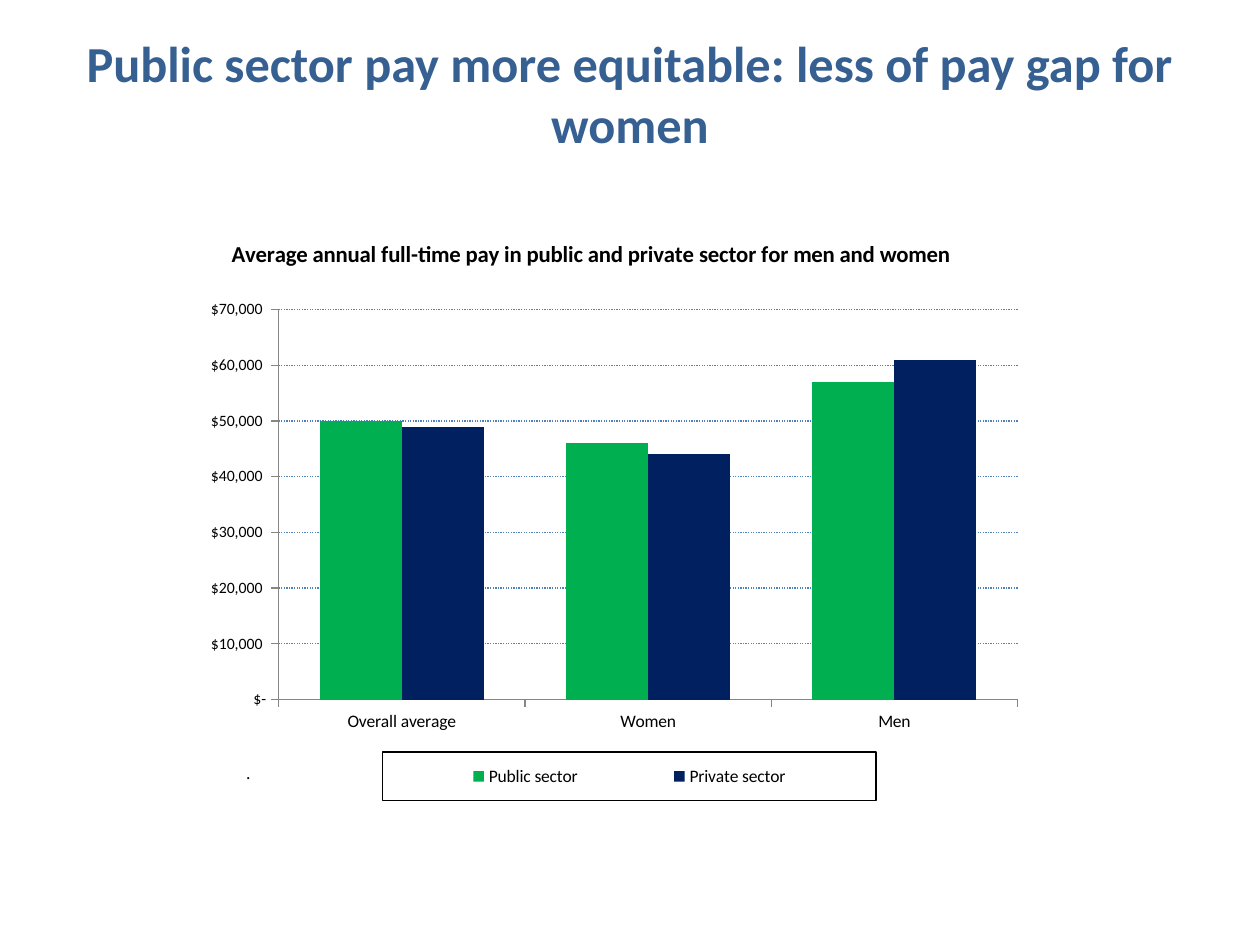
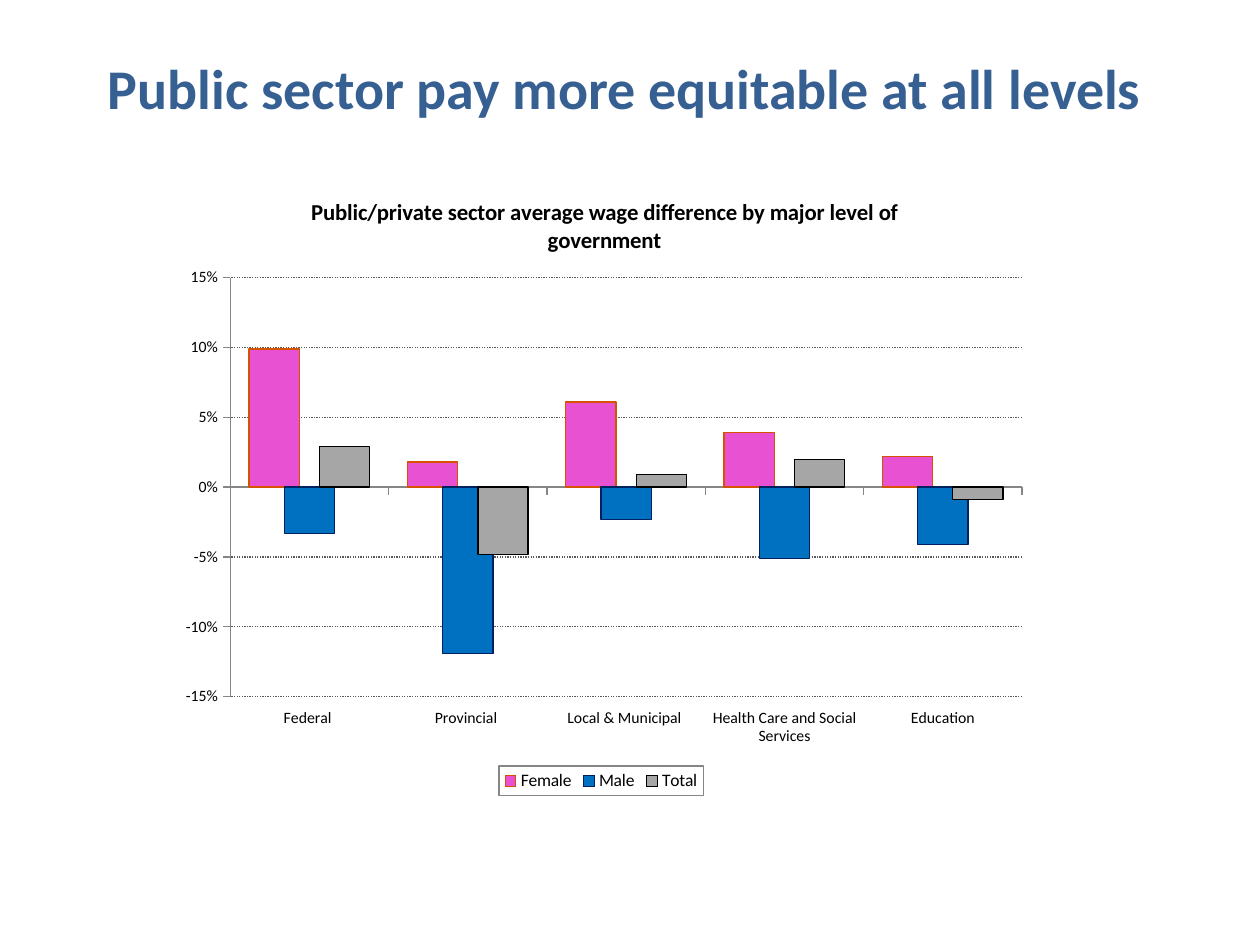
from dataclasses import dataclass
from lxml import etree
from pptx import Presentation
from pptx import util as u
from pptx.chart.data import CategoryChartData
from pptx.dml.color import RGBColor
from pptx.enum import chart as ch, dml, text
from pptx.oxml import parse_xml
from pptx.oxml.ns import nsdecls, qn


@dataclass(frozen=True)
class Theme:
    font: str = "Calibri"
    title: str = "376092"
    ink: str = "000000"
    axis: str = "868686"
    chart_title: float = 13
    label: float = 10
    small: float = 9


T = Theme()


def put(tf, content, size=T.label, bold=False, color=T.ink):
    p = tf.paragraphs[0]
    p.alignment = text.PP_ALIGN.CENTER
    r = p.add_run()
    r.text = content
    r.font.name, r.font.size, r.font.bold = T.font, u.Pt(size), bold
    r.font.color.rgb = RGBColor.from_string(color)


def place(el, index, x, y, w=None, h=None, inner=False):
    for old in el.findall(qn("c:layout")):
        el.remove(old)
    layout = etree.Element(qn("c:layout"))
    manual = etree.SubElement(layout, qn("c:manualLayout"))
    values = [("layoutTarget", "inner")] if inner else []
    values += [("xMode", "edge"), ("yMode", "edge"), ("x", x), ("y", y)]
    values += [("w", w), ("h", h)] if w else []
    for tag, val in values:
        etree.SubElement(manual, qn("c:" + tag)).set("val", str(val))
    el.insert(index, layout)


slides = [
    dict(
        title="Public sector pay more equitable: less of pay gap for women",
        title_size=28.8, title_box=(0.5, 0.3, 9, 0.87),
        chart_box=(1.08, 1.67, 7.25, 4.83),
        chart_title="Average annual full-time pay in public and private sector for men and women ",
        title_at=(0.1, 0.04), plot=(0.156, 0.163, 0.809, 0.641),
        legend=(0.27, 0.89, 0.54, 0.08), legend_line=T.ink,
        cats=["Overall average", "Women", "Men"], cat_size=T.label,
        series=[("Public sector", [50000, 46000, 57000], "00B050", None),
                ("Private sector", [49000, 44000, 61000], "002060", None)],
        scale=(0, 70000, 10000), gap=100, overlap=0, grid="4F81BD",
        fmt='_-"$"* #,##0_-;\\-"$"* #,##0_-;_-"$"* "-"', note=".",
    ),
    dict(
        title="Public sector pay more equitable at all levels",
        title_size=32, title_box=(0.5, 0.3, 8.92, 0.78),
        chart_box=(1.33, 1.33, 6.92, 5),
        chart_title="Public/private sector average wage difference by major level of government",
        title_at=(0.16, 0.04), plot=(0.072, 0.175, 0.908, 0.665),
        legend=(0.38, 0.95, 0.235, 0.047), legend_line=T.axis,
        cats=["Federal ", "Provincial ", "Local & Municipal ",
              "Health Care and Social Services", "Education"], cat_size=T.small,
        series=[("Female", [0.099, 0.018, 0.061, 0.039, 0.022], "E951D3", "D65200"),
                ("Male", [-0.033, -0.119, -0.023, -0.051, -0.041], "0070C0", "002060"),
                ("Total", [0.029, -0.048, 0.009, 0.02, -0.009], "A6A6A6", "000000")],
        scale=(-0.15, 0.15, 0.05), gap=75, overlap=30, grid="595959",
        fmt="0%", note=None,
    ),
]

prs = Presentation()
prs.slide_width, prs.slide_height = u.Inches(10), u.Inches(7.5)

for d in slides:
    s = prs.slides.add_slide(prs.slide_layouts[5])
    sp = s.shapes.title
    sp.left, sp.top, sp.width, sp.height = map(u.Inches, d["title_box"])
    tf = sp.text_frame
    tf.word_wrap = True
    tf.auto_size = text.MSO_AUTO_SIZE.NONE
    tf.vertical_anchor = text.MSO_ANCHOR.MIDDLE
    put(tf, d["title"], size=d["title_size"], bold=True, color=T.title)

    data = CategoryChartData(number_format="General")
    data.categories = d["cats"]
    for name, vals, fill, line in d["series"]:
        data.add_series(name, vals)
    chart = s.shapes.add_chart(ch.XL_CHART_TYPE.COLUMN_CLUSTERED,
                               *map(u.Inches, d["chart_box"]), data).chart
    chart.font.name, chart.font.size = T.font, u.Pt(T.label)
    chart.font.color.rgb = RGBColor.from_string(T.ink)

    chart.has_title = True
    put(chart.chart_title.text_frame, d["chart_title"], size=T.chart_title, bold=True)
    chart.chart_title.include_in_layout = False
    place(chart.chart_title._element, 1, *d["title_at"])
    place(chart._chartSpace.chart.plotArea, 0, *d["plot"], inner=True)

    plot = chart.plots[0]
    plot.vary_by_categories = False
    plot.gap_width, plot.overlap = d["gap"], d["overlap"]
    for series, (name, vals, fill, line) in zip(plot.series, d["series"]):
        series.invert_if_negative = False
        series.format.fill.solid()
        series.format.fill.fore_color.rgb = RGBColor.from_string(fill)
        if line:
            series.format.line.color.rgb = RGBColor.from_string(line)
            series.format.line.width = u.Pt(0.75)
        else:
            series.format.line.fill.background()

    cat, val = chart.category_axis, chart.value_axis
    for axis, size in ((cat, d["cat_size"]), (val, T.small)):
        axis.major_tick_mark = ch.XL_TICK_MARK.OUTSIDE
        axis.minor_tick_mark = ch.XL_TICK_MARK.NONE
        axis.tick_labels.font.size = u.Pt(size)
        axis.format.line.color.rgb = RGBColor.from_string(T.axis)
        axis.format.line.width = u.Pt(0.75)
    cat.tick_label_position = ch.XL_TICK_LABEL_POSITION.LOW
    val.minimum_scale, val.maximum_scale, val.major_unit = d["scale"]
    val.tick_labels.number_format = d["fmt"]
    val.tick_labels.number_format_is_linked = False
    val.has_major_gridlines = True
    grid = val.major_gridlines.format.line
    grid.color.rgb = RGBColor.from_string(d["grid"])
    grid.width = u.Pt(0.75)
    grid.dash_style = dml.MSO_LINE.ROUND_DOT
    if d["note"]:
        put(cat.axis_title.text_frame, d["note"])
        place(cat.axis_title._element, 1, 0.117, 0.9)

    chart.has_legend = True
    legend = chart.legend
    legend.position = ch.XL_LEGEND_POSITION.BOTTOM
    legend.include_in_layout = False
    legend.font.size = u.Pt(T.label)
    place(legend._element, 1, *d["legend"])
    legend._element.find(qn("c:txPr")).addprevious(parse_xml(
        f'<c:spPr {nsdecls("c", "a")}><a:ln w="9525"><a:solidFill>'
        f'<a:srgbClr val="{d["legend_line"]}"/></a:solidFill></a:ln></c:spPr>'))

prs.save("out.pptx")
